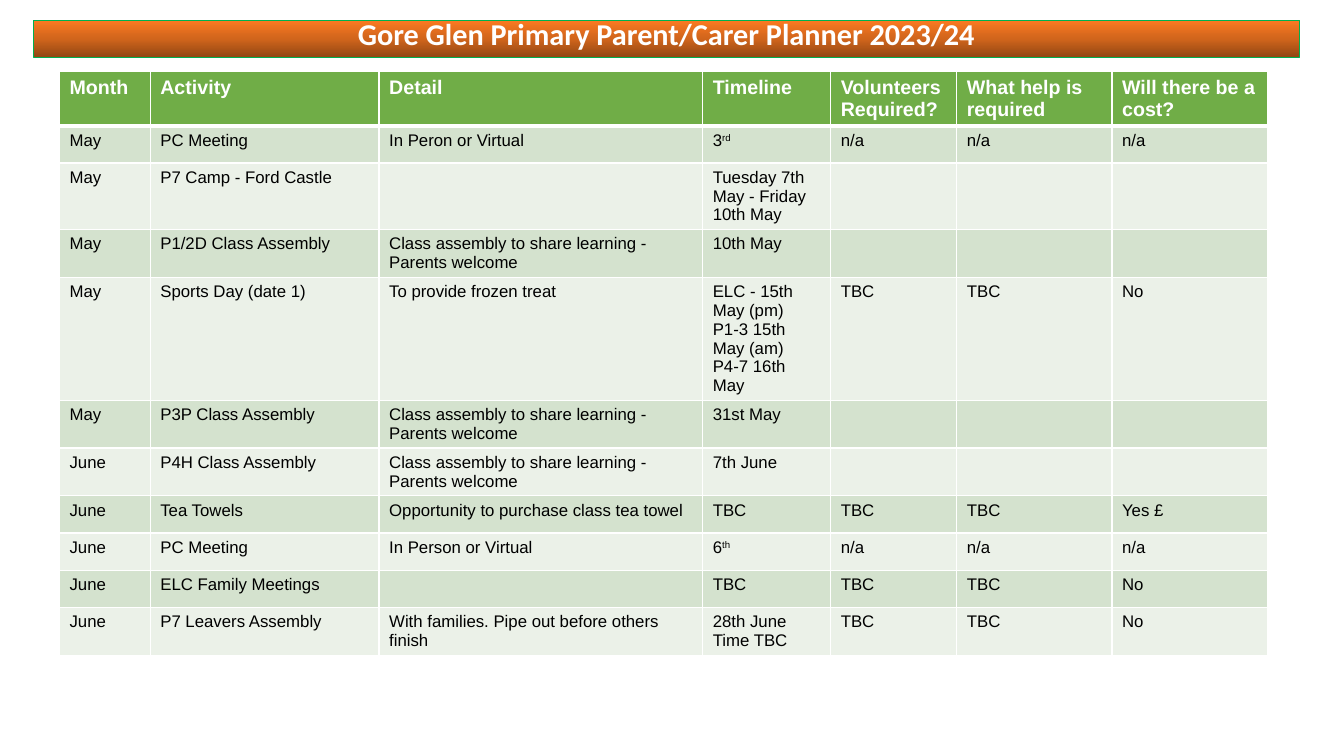
from copy import deepcopy
from lxml import etree
from pptx import Presentation
from pptx import util as u
from pptx.dml.color import RGBColor
from pptx.enum import shapes, text
from pptx.oxml.ns import qn


def rgb(value):
    return RGBColor.from_string(value)


def write(p, content, size=12, color="000000", bold=False, font="Arial"):
    """Fill a paragraph; text after ^ is raised."""
    for i, part in enumerate(content.split("^")):
        r = p.add_run()
        r.text = part
        r.font.size, r.font.bold, r.font.name = u.Pt(size), bold, font
        r.font.color.rgb = rgb(color)
        if i:
            r._r.get_or_add_rPr().set("baseline", "30000")


prs = Presentation()
prs.slide_width, prs.slide_height = u.Inches(13.33), u.Inches(7.5)
s = prs.slides.add_slide(prs.slide_layouts[6])

# Title banner
sp = s.shapes.add_shape(shapes.MSO_SHAPE.RECTANGLE, u.Inches(0.33), u.Inches(0.2),
                        u.Inches(12.56), u.Inches(0.37))
sp.shadow.inherit = False
sp.line.color.rgb = rgb("00B050")
sp.line.width = u.Pt(0.75)
sp.fill.gradient()
sp.fill.gradient_angle = 90
stops = sp._element.spPr.find(qn("a:gradFill")).find(qn("a:gsLst"))
stops.insert(1, deepcopy(stops[0]))
for stop, color, position in zip(sp.fill.gradient_stops,
                                 ("914613", "D1651C", "FB7A22"), (0, 0.5, 1)):
    stop.color.rgb = rgb(color)
    stop.position = position
tf = sp.text_frame
tf.word_wrap = True
tf.vertical_anchor = text.MSO_ANCHOR.BOTTOM
p = tf.paragraphs[0]
p.alignment = text.PP_ALIGN.CENTER
p.line_spacing = 0.9
write(p, "Gore Glen Primary Parent/Carer Planner 2023/24",
      size=21.6, color="FFFFFF", bold=True, font="Calibri")

# Planner content
assembly = "Class assembly to share learning - Parents welcome"
rows = [
    ("Month", "Activity", "Detail", "Timeline", "Volunteers Required?",
     "What help is required", "Will there be a cost?"),
    ("May", "PC Meeting", "In Peron or Virtual", "3^rd", "n/a", "n/a", "n/a"),
    ("May", "P7 Camp - Ford Castle", "", "Tuesday 7th May - Friday 10th May", "", "", ""),
    ("May", "P1/2D Class Assembly", assembly, "10th May", "", "", ""),
    ("May", "Sports Day (date 1)", "To provide frozen treat",
     "ELC - 15th May (pm)\nP1-3 15th May (am)\nP4-7 16th May", "TBC", "TBC", "No"),
    ("May", "P3P Class Assembly", assembly, "31st May", "", "", ""),
    ("June", "P4H Class Assembly", assembly, "7th June", "", "", ""),
    ("June", "Tea Towels", "Opportunity to purchase class tea towel",
     "TBC", "TBC", "TBC", "Yes £"),
    ("June", "PC Meeting", "In Person or Virtual", "6^th", "n/a", "n/a", "n/a"),
    ("June", "ELC Family Meetings", "", "TBC", "TBC", "TBC", "No"),
    ("June", "P7 Leavers Assembly", "With families. Pipe out before others finish",
     "28th June\nTime TBC", "TBC", "TBC", "No"),
]
widths = (0.9, 2.27, 3.21, 1.27, 1.25, 1.54, 1.54)

# Planner table
table = s.shapes.add_table(len(rows), len(widths), u.Inches(0.59), u.Inches(0.71),
                           u.Inches(11.99), u.Inches(3.98)).table
for column, width in zip(table.columns, widths):
    column.width = u.Inches(width)
for i, row in enumerate(rows):
    header = i == 0
    table.rows[i].height = u.Inches(0.28 if header else 0.37)
    row_fill = "70AD47" if header else ("EBF1E8", "D4E2CE")[i % 2]
    for j, content in enumerate(row):
        cell = table.cell(i, j)
        # White borders, thicker below the header
        for side in ("lnL", "lnR", "lnT", "lnB"):
            thick = (i, side) in ((0, "lnB"), (1, "lnT"))
            ln = etree.SubElement(cell._tc.get_or_add_tcPr(), qn("a:" + side),
                                  w=str(u.Pt(3 if thick else 1)))
            solid = etree.SubElement(ln, qn("a:solidFill"))
            etree.SubElement(solid, qn("a:srgbClr"), val="FFFFFF")
        cell.fill.solid()
        cell.fill.fore_color.rgb = rgb(row_fill)
        tf = cell.text_frame
        if not content:
            # Keeps an empty cell from stretching its row
            tf.paragraphs[0]._p.get_or_add_endParaRPr().set("sz", "1200")
            continue
        for k, line in enumerate(content.split("\n")):
            p = tf.add_paragraph() if k else tf.paragraphs[0]
            if header:
                write(p, line, size=14, color="FFFFFF", bold=True)
            else:
                write(p, line)

prs.save("out.pptx")
